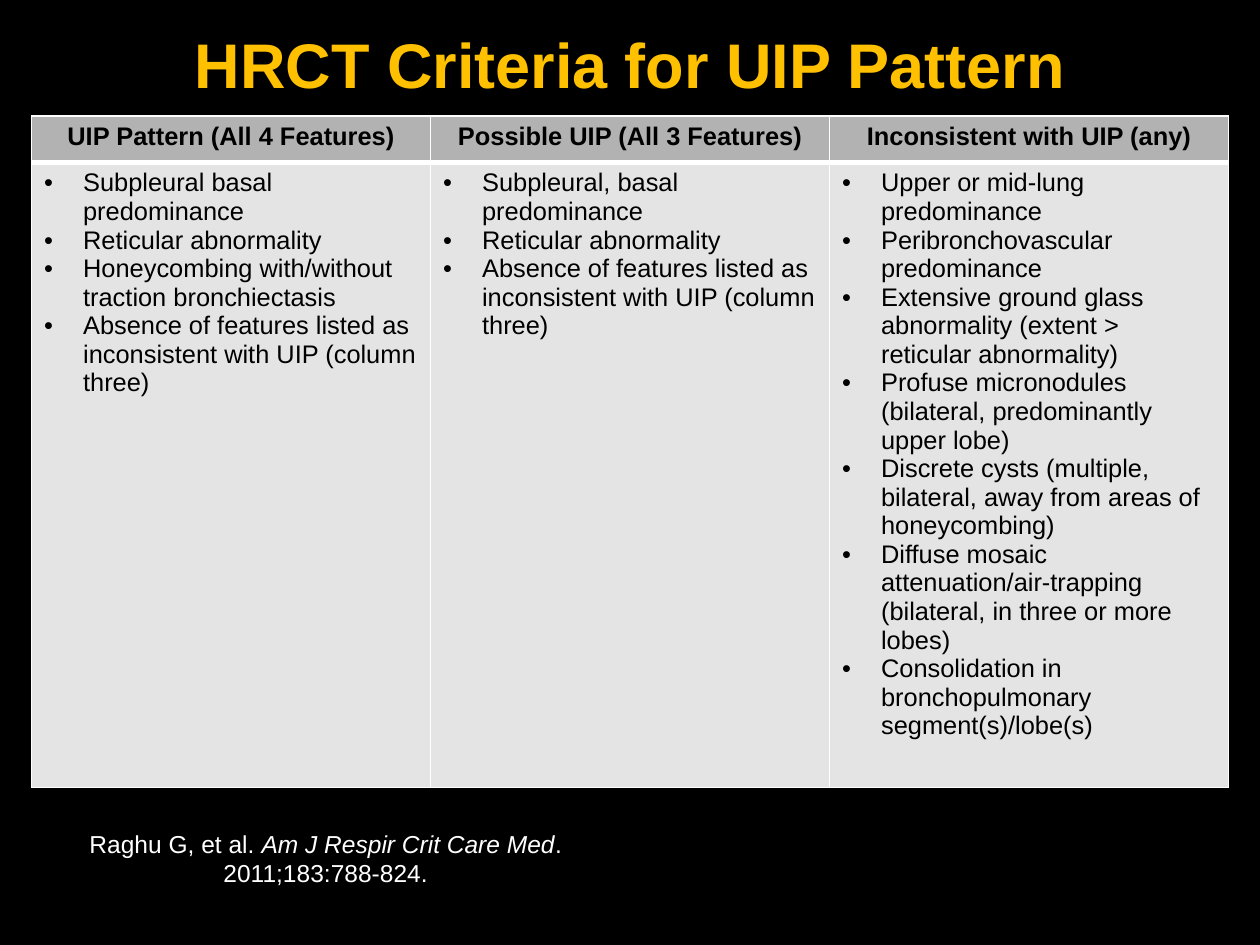
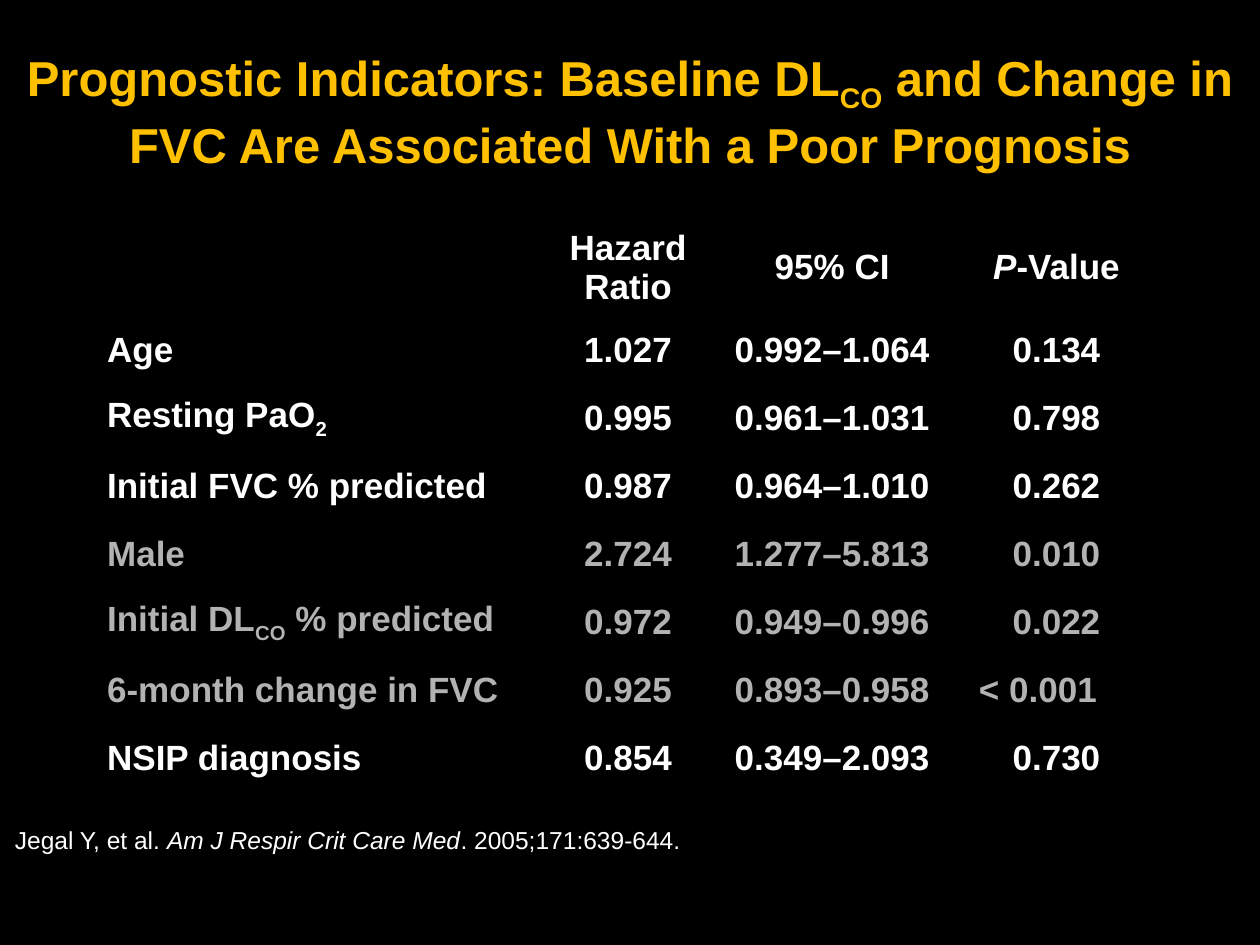
from pptx import Presentation
from pptx.dml.color import RGBColor
from pptx.enum.text import MSO_ANCHOR, PP_ALIGN
from pptx.oxml.ns import qn
from pptx.util import Inches, Pt
from lxml.etree import SubElement

HUES = {"back": "000000", "title": "FFC000", "white": "FFFFFF", "ink": "000000",
        "head": "B2B2B2", "body": "E4E4E4", "mark": "B2B2B2"}


def write(para, text, size, hue, bold=False, italic=True, align=PP_ALIGN.LEFT):
    para.alignment = align
    for i, part in enumerate(text.split("|")):
        if not part:
            continue
        run = para.add_run()
        run.text = part
        font = run.font
        font.name, font.size, font.bold = "Arial", Pt(size), bold
        font.color.rgb = RGBColor.from_string(HUES[hue])
        if i % 2 and italic:
            font.italic = True
        elif i % 2:
            font._element.set("baseline", "-25000")


def grid(slide, box, wides, highs, rule):
    table = slide.shapes.add_table(len(highs), len(wides), *map(Inches, box)).table
    table.first_row = table.horz_banding = False
    for col, wide in zip(table.columns, wides):
        col.width = Inches(wide)
    for row, high in zip(table.rows, highs):
        row.height = Inches(high)
    for r in range(len(highs)):
        for cell in table.rows[r].cells:
            props = cell._tc.get_or_add_tcPr()
            for side in "LRTB":
                thick = (r, side) in ((0, "B"), (1, "T"))
                line = SubElement(props, qn("a:ln" + side), w=str(Pt(3 if thick else 1)))
                if rule:
                    fill = SubElement(line, qn("a:solidFill"))
                    SubElement(fill, qn("a:srgbClr"), val=HUES["white"])
                else:
                    SubElement(line, qn("a:noFill"))
            cell.fill.background()
    return table


deck = Presentation()
deck.slide_width, deck.slide_height = Inches(10), Inches(7.5)

pages = [
    ("HRCT Criteria for UIP Pattern", 36, (0, 0.17, 10, 0.67),
     "Raghu G, et al. |Am J Respir Crit Care Med|. 2011;183:788-824.",
     (-0.03, 6.53, 5.23, 0.57), PP_ALIGN.CENTER),
    ("Prognostic Indicators: Baseline DL|CO| and Change in FVC Are Associated With a Poor Prognosis",
     28, (0, 0.25, 10, 1.25),
     "Jegal Y, et al. |Am J Respir Crit Care Med|. 2005;171:639-644.",
     (0.02, 6.5, 8.61, 0.33), PP_ALIGN.LEFT),
]
slides = []
for title, size, spot, cite, place, align in pages:
    slide = deck.slides.add_slide(deck.slide_layouts[6])
    slide.background.fill.solid()
    slide.background.fill.fore_color.rgb = RGBColor.from_string(HUES["back"])
    frame = slide.shapes.add_textbox(*map(Inches, spot)).text_frame
    frame.word_wrap = True
    frame.vertical_anchor = MSO_ANCHOR.MIDDLE
    write(frame.paragraphs[0], title, size, "title", True, False, PP_ALIGN.CENTER)
    frame = slide.shapes.add_textbox(*map(Inches, place)).text_frame
    frame.word_wrap = True
    write(frame.paragraphs[0], cite, 14, "white", align=align)
    slides.append(slide)

groups = [
    ("UIP Pattern (All 4 Features)", [
        "Subpleural basal predominance",
        "Reticular abnormality",
        "Honeycombing with/without traction bronchiectasis",
        "Absence of features listed as inconsistent with UIP (column three)"]),
    ("Possible UIP (All 3 Features)", [
        "Subpleural, basal predominance",
        "Reticular abnormality",
        "Absence of features listed as inconsistent with UIP (column three)"]),
    ("Inconsistent with UIP (any)", [
        "Upper or mid-lung predominance",
        "Peribronchovascular predominance",
        "Extensive ground glass abnormality (extent > reticular abnormality)",
        "Profuse micronodules (bilateral, predominantly upper lobe)",
        "Discrete cysts (multiple, bilateral, away from areas of honeycombing)",
        "Diffuse mosaic attenuation/air-trapping (bilateral, in three or more lobes)",
        "Consolidation in bronchopulmonary segment(s)/lobe(s)"]),
]
table = grid(slides[0], (0.25, 0.92, 9.5, 5.33), [9.5 / 3] * 3, [0.37, 4.96], True)
for c, (head, points) in enumerate(groups):
    for r, hue in enumerate(("head", "body")):
        cell = table.cell(r, c)
        cell.fill.solid()
        cell.fill.fore_color.rgb = RGBColor.from_string(HUES[hue])
    write(table.cell(0, c).text_frame.paragraphs[0], head, 14.5, "ink", True,
          align=PP_ALIGN.CENTER)
    frame = table.cell(1, c).text_frame
    for i, point in enumerate(points):
        para = frame.add_paragraph() if i else frame.paragraphs[0]
        props = para._p.get_or_add_pPr()
        props.set("marL", str(Inches(0.31)))
        props.set("indent", str(Inches(-0.31)))
        SubElement(props, qn("a:buFont"), typeface="Arial")
        SubElement(props, qn("a:buChar"), char="•")
        write(para, point, 14.5, "ink")

stats = [
    ("", "Hazard Ratio", "95% CI", "|P|-Value"),
    ("Age", "1.027", "0.992–1.064", "0.134"),
    ("Resting PaO|2", "0.995", "0.961–1.031", "0.798"),
    ("Initial FVC % predicted", "0.987", "0.964–1.010", "0.262"),
    ("Male", "2.724", "1.277–5.813", "0.010"),
    ("Initial DL|CO| % predicted", "0.972", "0.949–0.996", "0.022"),
    ("6-month change in FVC", "0.925", "0.893–0.958", "< 0.001"),
    ("NSIP diagnosis", "0.854", "0.349–2.093", "0.730"),
]
table = grid(slides[1], (0.75, 1.74, 8.5, 4.53), [3.53, 1.41, 1.83, 1.73],
             [0.75] + [0.54] * 7, False)
for r, row in enumerate(stats):
    hue = "mark" if r in (4, 5, 6) else "white"
    for c, text in enumerate(row):
        cell = table.cell(r, c)
        cell.vertical_anchor = MSO_ANCHOR.MIDDLE
        left = c == 0 or text.startswith("<")
        if c and left:
            cell.margin_left = Inches(0.25)
        write(cell.text_frame.paragraphs[0], text, 20, hue, True, r == 0,
              PP_ALIGN.LEFT if left else PP_ALIGN.CENTER)

deck.save("out.pptx")
